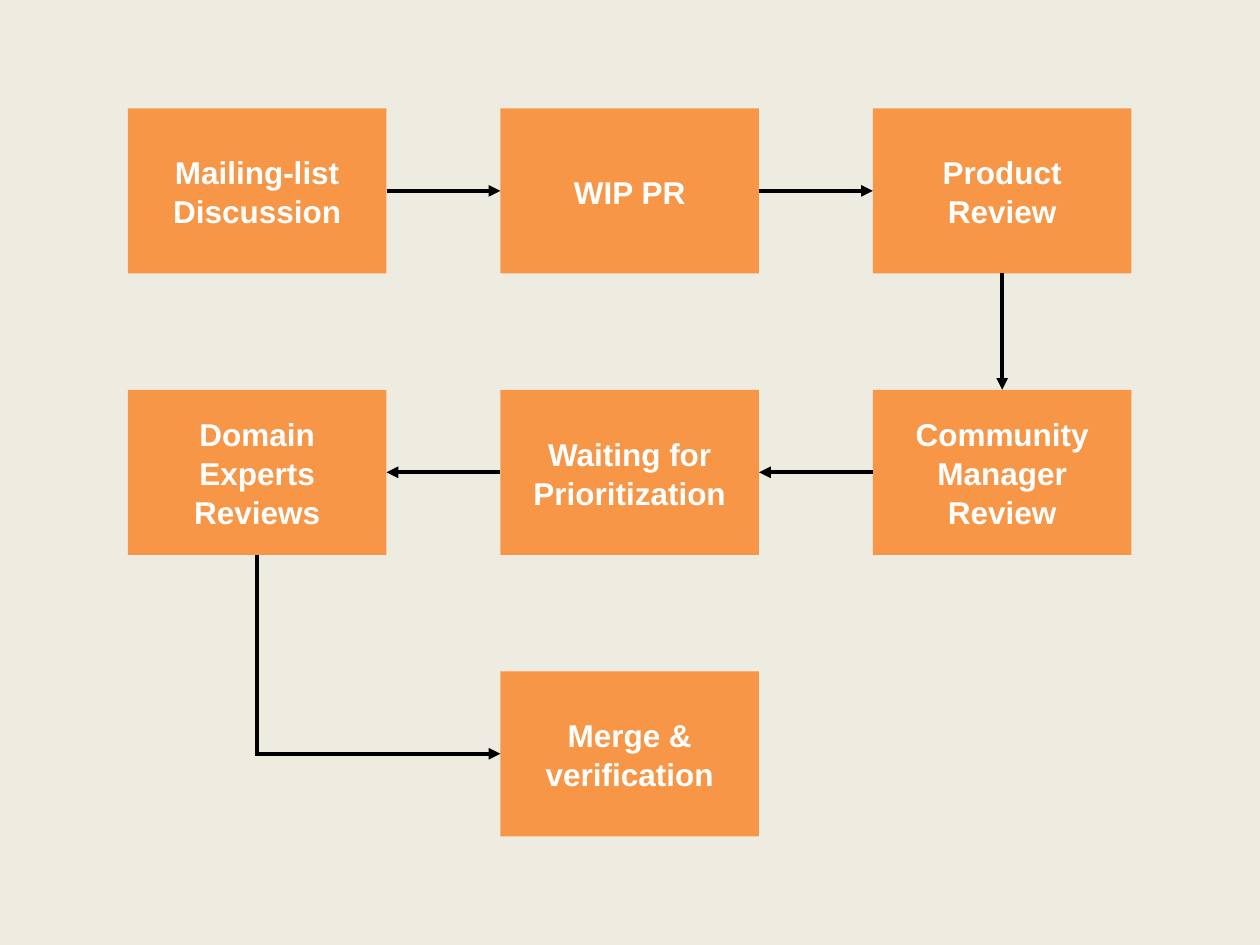
import pptx
import pptx.dml.color
import pptx.enum.shapes
import pptx.enum.text
import pptx.oxml
import pptx.oxml.ns
import pptx.util

Pt = pptx.util.Pt
RGBColor = pptx.dml.color.RGBColor

BACKGROUND = RGBColor(0xEE, 0xEC, 0xE1)
ORANGE = RGBColor(0xF7, 0x96, 0x46)
WHITE = RGBColor(0xFF, 0xFF, 0xFF)
BLACK = RGBColor(0x00, 0x00, 0x00)

# Grid of steps, in points
LEFT, TOP = 73.1, 61.9
COLUMN_STEP, ROW_STEP = 212.85, 160.85
BOX_WIDTH, BOX_HEIGHT = 147.8, 94.3

# Connection sites of a rectangle
SITE_TOP, SITE_LEFT, SITE_BOTTOM, SITE_RIGHT = range(4)

# Step text with its column and row, in order of the process
STEPS = [
    ("Mailing-list Discussion", 0, 0),
    ("WIP PR", 1, 0),
    ("Product Review", 2, 0),
    ("Community Manager Review", 2, 1),
    ("Waiting for Prioritization", 1, 1),
    ("Domain Experts Reviews", 0, 1),
    ("Merge & verification", 1, 2),
]

# Sites left and entered between consecutive steps
STRAIGHT_LINKS = [
    (SITE_RIGHT, SITE_LEFT),
    (SITE_RIGHT, SITE_LEFT),
    (SITE_BOTTOM, SITE_TOP),
    (SITE_LEFT, SITE_RIGHT),
    (SITE_LEFT, SITE_RIGHT),
]

FRAME_FORMAT = {
    "word_wrap": True,
    "vertical_anchor": pptx.enum.text.MSO_ANCHOR.MIDDLE,
    "margin_left": Pt(7.2),
    "margin_right": Pt(7.2),
    "margin_top": Pt(7.2),
    "margin_bottom": Pt(7.2),
}
PARAGRAPH_FORMAT = {
    "alignment": pptx.enum.text.PP_ALIGN.CENTER,
    "line_spacing": 1.04,
}
FONT_FORMAT = {"name": "Arial", "size": Pt(18), "bold": True}


def apply_format(target, values):
    for name, value in values.items():
        setattr(target, name, value)


def add_step(slide, text, column, row):
    shape = slide.shapes.add_shape(
        pptx.enum.shapes.MSO_SHAPE.RECTANGLE,
        Pt(LEFT + column * COLUMN_STEP), Pt(TOP + row * ROW_STEP),
        Pt(BOX_WIDTH), Pt(BOX_HEIGHT))
    shape.shadow.inherit = False
    shape.fill.solid()
    shape.fill.fore_color.rgb = ORANGE
    shape.line.fill.background()
    apply_format(shape.text_frame, FRAME_FORMAT)
    paragraph = shape.text_frame.paragraphs[0]
    apply_format(paragraph, PARAGRAPH_FORMAT)
    run = paragraph.add_run()
    run.text = text
    apply_format(run.font, FONT_FORMAT)
    run.font.color.rgb = WHITE
    return shape


def add_line(slide, start=(0, 0), end=(0, 0), arrow=True):
    connector = slide.shapes.add_connector(
        pptx.enum.shapes.MSO_CONNECTOR.STRAIGHT, *start, *end)
    connector.line.width = Pt(2.25)
    connector.line.color.rgb = BLACK
    if arrow:
        line_element = connector.line._get_or_add_ln()
        tail = pptx.oxml.parse_xml(
            f'<a:tailEnd {pptx.oxml.ns.nsdecls("a")} type="triangle"/>')
        line_element.append(tail)
    effects = pptx.oxml.parse_xml(
        f'<a:effectLst {pptx.oxml.ns.nsdecls("a")}/>')
    connector._element.spPr.append(effects)
    return connector


def main():
    presentation = pptx.Presentation()
    presentation.slide_width = Pt(720)
    presentation.slide_height = Pt(540)
    slide = presentation.slides.add_slide(presentation.slide_layouts[6])
    slide.background.fill.solid()
    slide.background.fill.fore_color.rgb = BACKGROUND

    # Process steps
    boxes = [add_step(slide, *step) for step in STEPS]

    # Straight arrows between the review steps
    for source, target, sites in zip(boxes, boxes[1:], STRAIGHT_LINKS):
        connector = add_line(slide)
        connector.begin_connect(source, sites[0])
        connector.end_connect(target, sites[1])

    # Two-part turn from the expert reviews to the merge
    experts, merge = boxes[-2:]
    corner = (experts.left + experts.width // 2,
              merge.top + merge.height // 2)
    down = add_line(slide, end=(corner[0], corner[1] + Pt(1.12)), arrow=False)
    down.begin_connect(experts, SITE_BOTTOM)
    across = add_line(slide, start=corner)
    across.end_connect(merge, SITE_LEFT)

    presentation.save("out.pptx")


if __name__ == "__main__":
    main()
